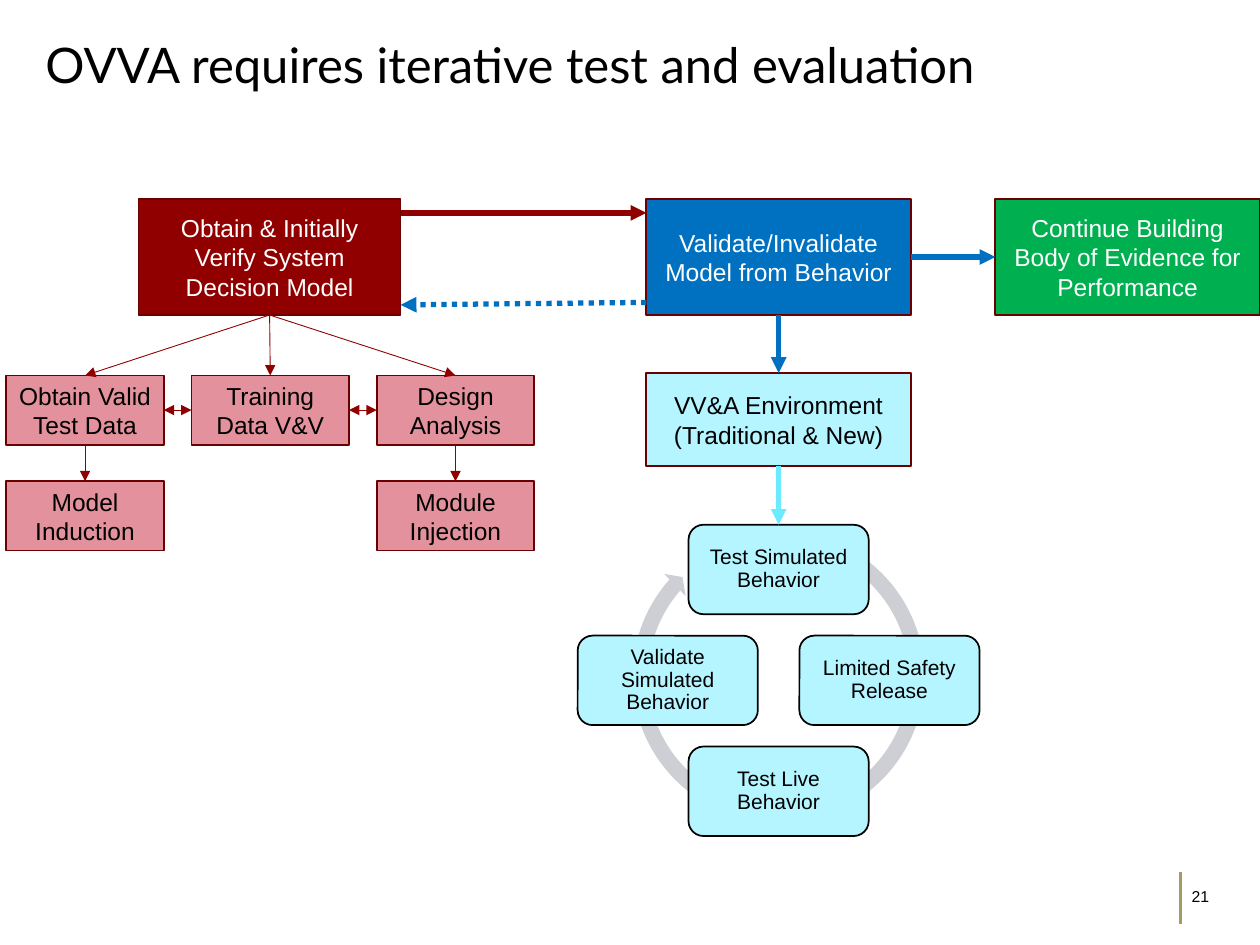
"""Build the slide on iterative test and evaluation in OVVA."""
from dataclasses import dataclass
from math import cos, pi, sin
from typing import Optional

from pptx import Presentation
from pptx.dml.color import RGBColor
from pptx.enum import dml, shapes, text
from pptx.oxml.ns import qn
from pptx.util import Inches, Pt
from lxml import etree


@dataclass(frozen=True)
class Theme:
    """Colours, fonts and type sizes."""
    black: str = "000000"
    white: str = "FFFFFF"
    red: str = "900001"
    border: str = "6B0001"
    pink: str = "E3929D"
    blue: str = "0070C0"
    green: str = "00B050"
    pale: str = "B5F5FF"
    cyan: str = "6BEBFF"
    grey: str = "CDCFD5"
    gold: str = "A59A60"
    body_font: str = "Arial"
    title_font: str = "Lato"
    title: int = 28
    box: int = 14
    step: int = 12
    number: int = 9


T = Theme()


@dataclass(frozen=True)
class Box:
    """A labelled box, placed by its left, top, width and height."""
    label: str
    at: tuple
    fill: str
    color: str = T.black
    line: str = T.border
    size: int = T.box
    kind: int = shapes.MSO_SHAPE.RECTANGLE
    inset: float = 0.08
    spacing: float = 1.0


@dataclass(frozen=True)
class Link:
    """A line between points, or between (box name, side) pairs."""
    start: tuple
    end: tuple
    color: str = T.red
    width: float = 0.5
    head: bool = False
    tail: bool = True
    dash: Optional[int] = None


def write(sp, words: str, *, size: int, color: str = T.black,
          font: str = T.body_font, align=text.PP_ALIGN.CENTER,
          anchor=text.MSO_ANCHOR.MIDDLE, inset: float = 0.1,
          spacing: float = 1.0) -> None:
    """Fill a shape with one formatted paragraph."""
    tf = sp.text_frame
    tf.word_wrap, tf.auto_size = True, text.MSO_AUTO_SIZE.NONE
    tf.vertical_anchor = anchor
    tf.margin_left = tf.margin_right = Inches(inset)
    tf.margin_top = tf.margin_bottom = Inches(0.05)
    p = tf.paragraphs[0]
    p.alignment, p.line_spacing = align, spacing
    r = p.add_run()
    r.text = words
    r.font.size, r.font.name = Pt(size), font
    r.font.color.rgb = RGBColor.from_string(color)


def add_plain(s, kind: int, at: tuple, fill: str):
    """Add a flat shape without an outline."""
    sp = s.shapes.add_shape(kind, *map(Inches, at))
    sp.shadow.inherit = False
    sp.fill.solid()
    sp.fill.fore_color.rgb = RGBColor.from_string(fill)
    sp.line.fill.background()
    return sp


def add_box(s, box: Box):
    """Add an outlined box with its label."""
    sp = add_plain(s, box.kind, box.at, box.fill)
    sp.line.color.rgb = RGBColor.from_string(box.line)
    sp.line.width = Pt(1)
    write(sp, box.label, size=box.size, color=box.color,
          inset=box.inset, spacing=box.spacing)
    return sp


def add_link(s, link: Link, boxes: dict) -> None:
    """Add a straight line, joined to boxes where they are named."""
    cx = s.shapes.add_connector(shapes.MSO_CONNECTOR.STRAIGHT, 0, 0, 0, 0)
    if isinstance(link.start[0], str):
        name, side = link.start
        cx.begin_connect(boxes[name], side)
    else:
        cx.begin_x, cx.begin_y = map(Inches, link.start)
    if isinstance(link.end[0], str):
        name, side = link.end
        cx.end_connect(boxes[name], side)
    else:
        cx.end_x, cx.end_y = map(Inches, link.end)
    cx.line.color.rgb = RGBColor.from_string(link.color)
    cx.line.width = Pt(link.width)
    if link.dash is not None:
        cx.line.dash_style = link.dash
    ln = cx.line._get_or_add_ln()
    for tag, shown in (("a:headEnd", link.head), ("a:tailEnd", link.tail)):
        if shown:
            etree.SubElement(ln, qn(tag)).set("type", "triangle")
    etree.SubElement(cx._element.spPr, qn("a:effectLst"))


def task(label: str, column: int, row: int) -> Box:
    """Place a supporting task on the pink grid."""
    return Box(label, (0.05 + 1.47 * column, 2.98 + 0.84 * row, 1.25, 0.55),
               T.pink)


def step(label: str, index: int) -> Box:
    """Place a step of the test cycle, clockwise from the top."""
    angle, radius, w, h = index * pi / 2, 0.88, 1.43, 0.71
    x, y = 6.18 + radius * sin(angle), 5.4 - radius * cos(angle)
    return Box(label, (x - w / 2, y - h / 2, w, h), T.pale, line=T.black,
               size=T.step, kind=shapes.MSO_SHAPE.ROUNDED_RECTANGLE,
               inset=0.05, spacing=0.9)


BOXES = {
    "obtain": Box("Obtain & Initially Verify System Decision Model",
                  (1.1, 1.58, 2.08, 0.92), T.red, T.white),
    "validate": Box("Validate/Invalidate Model from Behavior",
                    (5.13, 1.58, 2.1, 0.92), T.blue, T.white),
    "evidence": Box("Continue Building Body of Evidence for Performance",
                    (7.9, 1.58, 2.1, 0.92), T.green, T.white),
    "environment": Box("VV&A Environment (Traditional & New)",
                       (5.13, 2.96, 2.1, 0.74), T.pale),
    "data": task("Obtain Valid Test Data", 0, 0),
    "training": task("Training Data V&V", 1, 0),
    "design": task("Design Analysis", 2, 0),
    "induction": task("Model Induction", 0, 1),
    "injection": task("Module Injection", 2, 1),
    "simulate": step("Test Simulated Behavior", 0),
    "release": step("Limited Safety Release", 1),
    "live": step("Test Live Behavior", 2),
    "confirm": step("Validate Simulated Behavior", 3),
}

LINKS = [
    Link((3.18, 1.69), (5.13, 1.69), width=3),
    Link((5.13, 2.4), (3.18, 2.42), T.blue, 3, dash=dml.MSO_LINE.ROUND_DOT),
    Link(("validate", 3), ("evidence", 1), T.blue, 3),
    Link(("validate", 2), ("environment", 0), T.blue, 3),
    Link(("environment", 2), ("simulate", 0), T.cyan, 3),
    *(Link(("obtain", 2), (name, 0)) for name in ("data", "training", "design")),
    Link(("data", 2), ("induction", 0)),
    Link(("design", 2), ("injection", 0)),
    Link(("training", 1), ("data", 3), head=True),
    Link(("training", 3), ("design", 1), head=True),
    Link((9.37, 6.92), (9.37, 7.33), T.gold, 2, tail=False),
]


def main() -> None:
    """Draw the slide and save it."""
    prs = Presentation()
    prs.slide_width, prs.slide_height = Inches(10), Inches(7.5)
    s = prs.slides.add_slide(prs.slide_layouts[5])
    title = s.shapes.title
    title.left, title.top, title.width, title.height = map(
        Inches, (0.26, 0.22, 9.49, 1))
    write(title, "OVVA requires iterative test and evaluation", size=T.title,
          font=T.title_font, align=text.PP_ALIGN.LEFT,
          anchor=text.MSO_ANCHOR.TOP)
    ring = add_plain(s, shapes.MSO_SHAPE.CIRCULAR_ARROW,
                     (4.96, 4.15, 2.44, 2.44), T.grey)
    for i, value in enumerate((0.05, 2.73, 132.88, 177.28, 0.05)):
        ring.adjustments[i] = value
    boxes = {name: add_box(s, box) for name, box in BOXES.items()}
    for link in LINKS:
        add_link(s, link, boxes)
    number = s.shapes.add_textbox(*map(Inches, (9.36, 6.98, 0.39, 0.27)))
    write(number, "21", size=T.number, align=text.PP_ALIGN.LEFT)
    prs.save("out.pptx")


if __name__ == "__main__":
    main()
